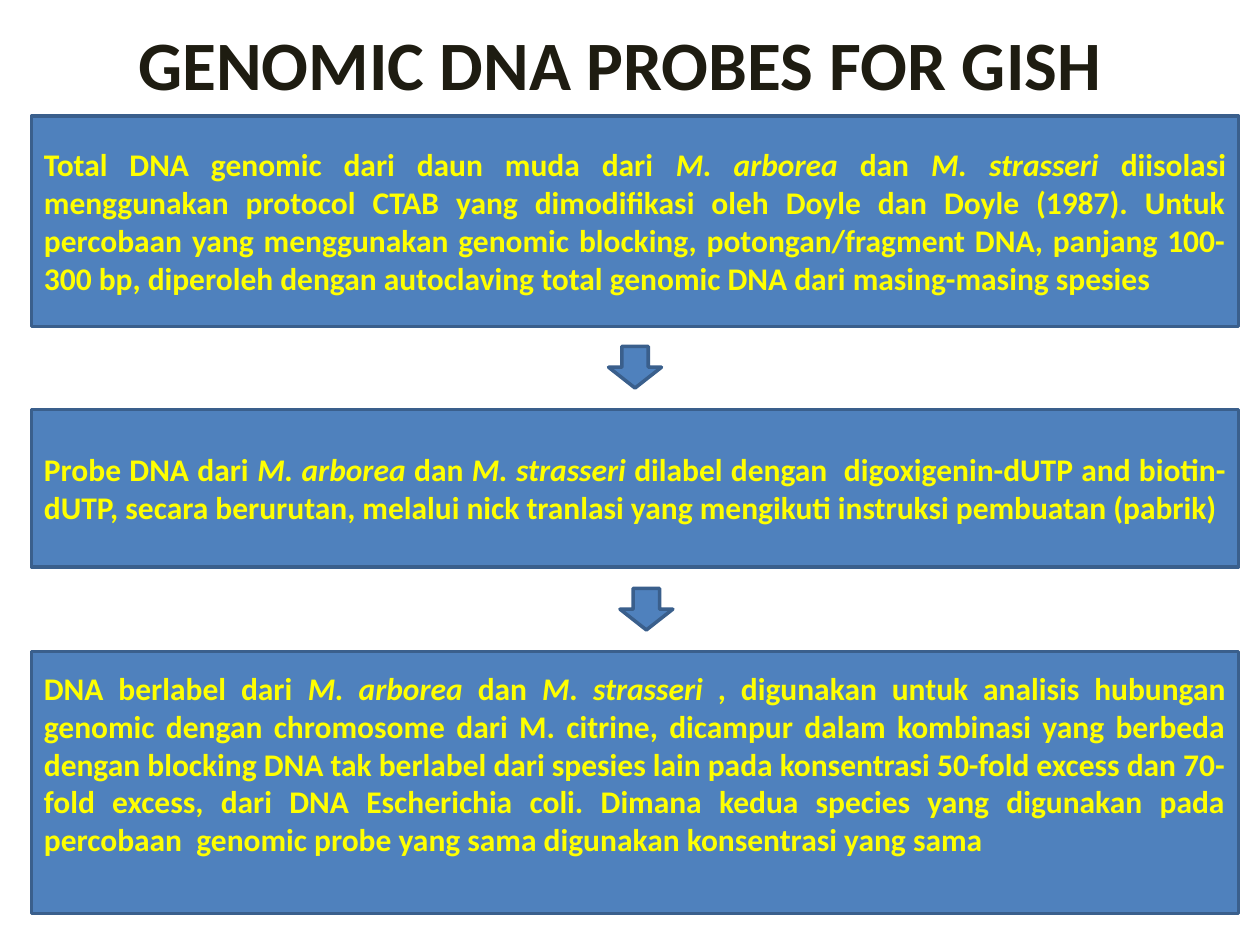
from pptx import Presentation
from pptx import util as u
from pptx.dml.color import RGBColor
from pptx.enum import shapes, text

BLUE = RGBColor(0x4F, 0x81, 0xBD)
EDGE = RGBColor(0x3A, 0x5F, 0x8C)
YELLOW = RGBColor(0xFF, 0xFF, 0x00)
DARK = RGBColor(0x1E, 0x1C, 0x11)

STEPS = [
    (0.92, 1.67, 0.05,
     "Total DNA genomic dari daun muda dari *M. arborea *dan *M. strasseri *"
     "diisolasi menggunakan protocol CTAB yang dimodifikasi oleh Doyle dan "
     "Doyle (1987). Untuk percobaan yang menggunakan genomic blocking, "
     "potongan/fragment DNA, panjang 100-300 bp, diperoleh dengan autoclaving "
     "total genomic DNA dari masing-masing spesies"),
    (3.25, 1.25, 0.05,
     "Probe DNA dari *M. arborea *dan *M. strasseri *dilabel dengan  "
     "digoxigenin-dUTP and biotin-dUTP, secara berurutan, melalui nick "
     "tranlasi yang mengikuti instruksi pembuatan (pabrik)"),
    (5.17, 2.08, 0.35,
     "DNA berlabel dari *M. arborea *dan *M. strasseri* , digunakan untuk "
     "analisis hubungan genomic dengan chromosome dari M. citrine, dicampur "
     "dalam kombinasi yang berbeda dengan blocking DNA tak berlabel dari "
     "spesies lain pada konsentrasi 50-fold excess dan 70-fold excess, dari "
     "DNA Escherichia coli. Dimana kedua species yang digunakan pada percobaan  "
     "genomic probe yang sama digunakan konsentrasi yang sama"),
]
ARROWS = [(4.83, 2.75), (4.92, 4.67)]


def write(frame, words, size, color, align, font="Calibri", bold=True):
    frame.word_wrap = True
    frame.auto_size = text.MSO_AUTO_SIZE.NONE
    frame.vertical_anchor = text.MSO_ANCHOR.MIDDLE
    para = frame.paragraphs[0]
    para.alignment = align
    for i, part in enumerate(words.split("*")):
        run = para.add_run()
        run.text = part
        run.font.name = font
        run.font.size = u.Pt(size)
        run.font.bold = bold
        run.font.italic = i % 2 == 1
        run.font.color.rgb = color


class Deck:
    fill, edge, width = BLUE, EDGE, 2

    def __init__(self, slide):
        self.slide = slide

    def title(self, words, *box):
        head = self.slide.shapes.title
        head.left, head.top, head.width, head.height = map(u.Inches, box)
        write(head.text_frame, words, 39.6, DARK, text.PP_ALIGN.CENTER)

    def shape(self, kind, *box):
        item = self.slide.shapes.add_shape(kind, *map(u.Inches, box))
        item.shadow.inherit = False
        item.fill.solid()
        item.fill.fore_color.rgb = self.fill
        item.line.color.rgb = self.edge
        item.line.width = u.Pt(self.width)
        return item

    def step(self, top, height, pad, words):
        item = self.shape(shapes.MSO_SHAPE.RECTANGLE, 0.25, top, 9.58, height)
        item.text_frame.margin_bottom = u.Inches(pad)
        write(item.text_frame, words, 18, YELLOW, text.PP_ALIGN.JUSTIFY)

    def arrow(self, left, top):
        self.shape(shapes.MSO_SHAPE.DOWN_ARROW, left, top, 0.42, 0.33)


def main():
    show = Presentation()
    show.slide_width = u.Inches(10)
    show.slide_height = u.Inches(7.5)
    deck = Deck(show.slides.add_slide(show.slide_layouts[5]))
    deck.title("GENOMIC DNA PROBES FOR GISH", 0.67, 0.25, 8.5, 0.5)
    for step in STEPS:
        deck.step(*step)
    for arrow in ARROWS:
        deck.arrow(*arrow)
    show.save("out.pptx")


if __name__ == "__main__":
    main()
